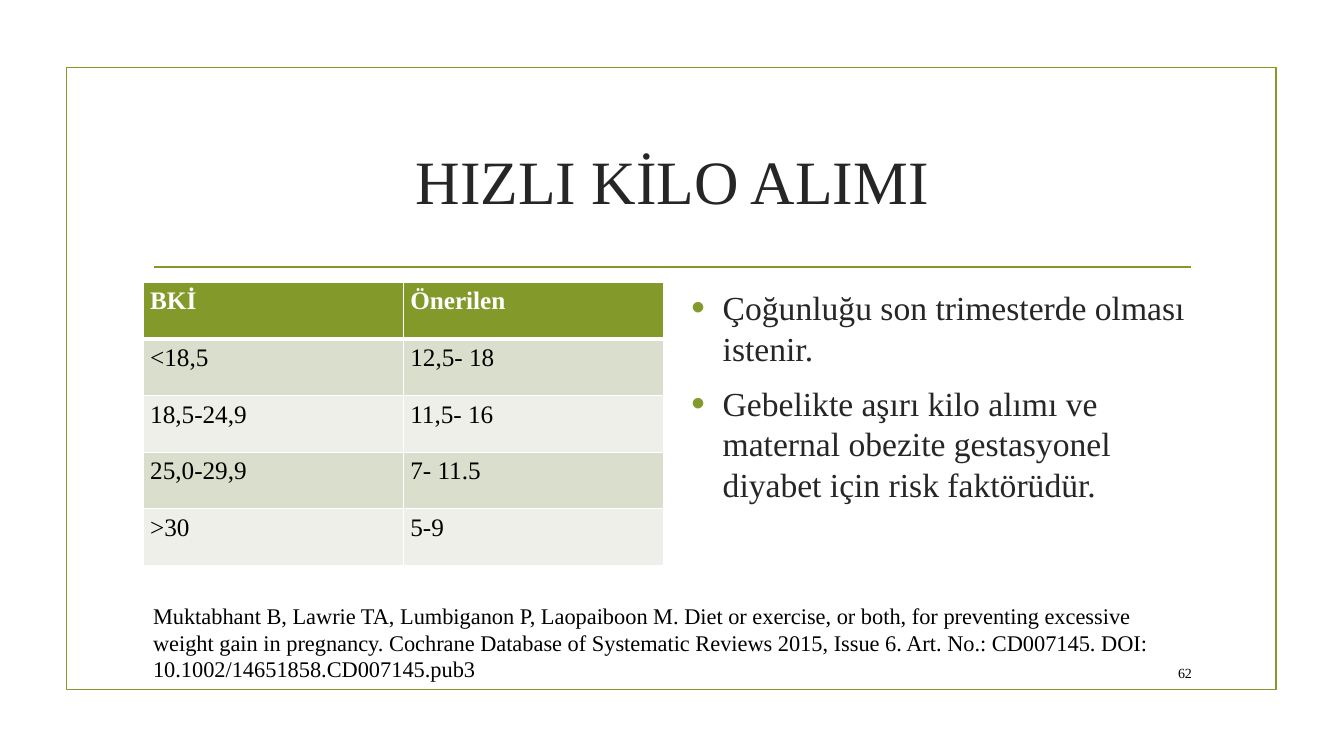
from lxml import etree
from pptx import Presentation
from pptx.dml.color import RGBColor
from pptx.enum import shapes, text
from pptx.oxml import ns
from pptx.util import Inches, Pt

FONT = "Times New Roman"
GREEN = RGBColor(0x83, 0x99, 0x2A)
DARK = RGBColor(0x26, 0x26, 0x26)
BLACK = RGBColor(0, 0, 0)
WHITE = RGBColor(0xFF, 0xFF, 0xFF)
BANDS = [RGBColor(0xD9, 0xDE, 0xCD), RGBColor(0xED, 0xEF, 0xE8)]

LEFT, WIDTH = 1.42, 10.5
COLUMN = 5.16
CONTENT_TOP = 2.8

WEIGHT_GAIN = [
    ("BKİ", "Önerilen"),
    ("<18,5", "12,5- 18"),
    ("18,5-24,9", "11,5- 16"),
    ("25,0-29,9", "7- 11.5"),
    (">30", "5-9"),
]
POINTS = [
    "Çoğunluğu son trimesterde olması istenir.",
    "Gebelikte aşırı kilo alımı ve maternal obezite gestasyonel diyabet için risk faktörüdür.",
]
REFERENCE = (
    "Muktabhant B, Lawrie TA, Lumbiganon P, Laopaiboon M. Diet or exercise, or both, "
    "for preventing excessive weight gain in pregnancy. Cochrane Database of Systematic "
    "Reviews 2015, Issue 6. Art. No.: CD007145. DOI: 10.1002/14651858.CD007145.pub3"
)


def set_font(p, size, color, bold=False):
    p.font.name = FONT
    p.font.size = Pt(size)
    p.font.color.rgb = color
    p.font.bold = bold


def sub(parent, tag, **attrs):
    return etree.SubElement(parent, ns.qn(tag), {k: str(v) for k, v in attrs.items()})


def add_text(slide, box, lines, size, color, align=text.PP_ALIGN.LEFT,
             anchor=text.MSO_ANCHOR.MIDDLE):
    tf = slide.shapes.add_textbox(*map(Inches, box)).text_frame
    tf.word_wrap = True
    tf.vertical_anchor = anchor
    for i, line in enumerate(lines):
        p = tf.paragraphs[0] if i == 0 else tf.add_paragraph()
        p.text = line
        p.alignment = align
        set_font(p, size, color)
    return tf


def add_frame(slide, box):
    sp = slide.shapes.add_shape(shapes.MSO_SHAPE.RECTANGLE, *map(Inches, box))
    sp.shadow.inherit = False
    sp.fill.background()
    sp.line.color.rgb = GREEN
    sp.line.width = Pt(1.25)


def add_title(slide, box, title):
    left, top, width, height = box
    # Rule below the title
    inset, y = 0.11, top + height + 0.15
    rule = slide.shapes.add_connector(
        shapes.MSO_CONNECTOR.STRAIGHT, Inches(left + inset), Inches(y),
        Inches(left + width - inset), Inches(y))
    rule.line.color.rgb = GREEN
    rule.line.width = Pt(1.25)
    sub(rule._element.spPr, "a:effectLst")
    add_text(slide, box, [title], 44, DARK, text.PP_ALIGN.CENTER)


def set_borders(cell, bottom):
    tcPr = cell._tc.get_or_add_tcPr()
    for side, width in (("L", 1), ("R", 1), ("T", 1), ("B", bottom)):
        ln = sub(tcPr, "a:ln" + side, w=Pt(width))
        sub(sub(ln, "a:solidFill"), "a:srgbClr", val=WHITE)


def add_weight_table(slide, box, rows):
    table = slide.shapes.add_table(len(rows), len(rows[0]), *map(Inches, box)).table
    for r, row in enumerate(rows):
        header = r == 0
        for c, value in enumerate(row):
            cell = table.cell(r, c)
            cell.margin_left = cell.margin_right = Inches(0.07)
            cell.margin_top = cell.margin_bottom = Inches(0.05)
            # The header rule is shared with the row below it
            set_borders(cell, 3 if header else 1)
            cell.fill.solid()
            cell.fill.fore_color.rgb = GREEN if header else BANDS[(r - 1) % 2]
            cell.text = value
            set_font(cell.text_frame.paragraphs[0], 18, WHITE if header else BLACK, header)


def add_bullets(slide, box, points):
    tf = add_text(slide, box, points, 24, DARK, anchor=text.MSO_ANCHOR.TOP)
    for i, p in enumerate(tf.paragraphs):
        p.space_before = Pt(4.8 if i else 0)
        p.space_after = Pt(6)
        pPr = p._p.get_or_add_pPr()
        pPr.set("marL", str(Inches(0.31)))
        pPr.set("indent", str(-Inches(0.31)))
        marks = etree.Element("marks")
        sub(sub(marks, "a:buClr"), "a:srgbClr", val=GREEN)
        sub(marks, "a:buSzPct", val=115000)
        sub(marks, "a:buFont", typeface="Arial")
        sub(marks, "a:buChar", char="•")
        # Bullet elements must precede the font properties
        font = pPr.find(ns.qn("a:defRPr"))
        for mark in list(marks):
            font.addprevious(mark)


def add_footer(slide, box, reference, number):
    left, top, width, height = box
    w, h = 0.59, 0.31
    add_text(slide, (left + width - w, top + height - h, w, h), [number], 10, BLACK,
             text.PP_ALIGN.RIGHT)
    add_text(slide, box, [reference], 16, BLACK)


def main():
    prs = Presentation()
    prs.slide_width, prs.slide_height = Inches(13.33), Inches(7.5)
    slide = prs.slides.add_slide(prs.slide_layouts[6])
    add_frame(slide, (0.66, 0.67, 12, 6.17))
    add_title(slide, (LEFT, 1.07, WIDTH, 1.43), "HIZLI KİLO ALIMI")
    add_weight_table(slide, (LEFT, CONTENT_TOP, COLUMN, 2.81), WEIGHT_GAIN)
    add_bullets(slide, (LEFT + WIDTH - COLUMN, CONTENT_TOP, COLUMN, 3.62), POINTS)
    add_footer(slide, (LEFT, 5.91, WIDTH, 0.92), REFERENCE, "62")
    prs.save("out.pptx")


if __name__ == "__main__":
    main()
